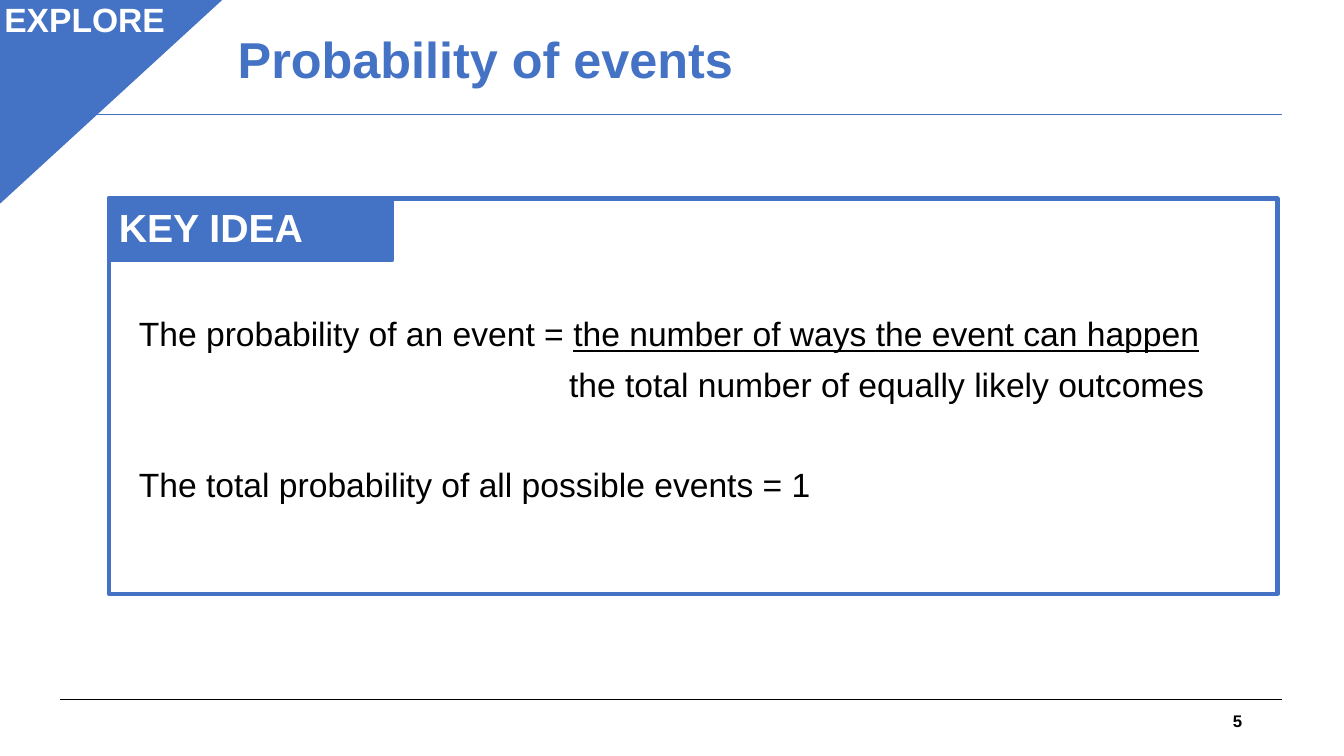
from dataclasses import dataclass

from lxml import etree
from pptx import Presentation, util as u
from pptx.dml.color import RGBColor
from pptx.enum import shapes, text
from pptx.oxml.ns import qn

COLOURS = {"blue": "4472C4", "white": "FFFFFF", "black": "000000"}
WIDTH, HEIGHT = u.Inches(13.33), u.Inches(7.5)
FONT = "Arial"


@dataclass(frozen=True)
class Area:
    """Left, top, width and height as percentages of the slide."""
    left: float
    top: float
    width: float
    height: float

    def lengths(self) -> tuple[int, int, int, int]:
        return (across(self.left), down(self.top),
                across(self.width), down(self.height))


@dataclass(frozen=True)
class Label:
    words: str
    area: Area
    size: float
    colour: str
    align: text.PP_ALIGN = text.PP_ALIGN.LEFT
    anchor: text.MSO_ANCHOR = text.MSO_ANCHOR.MIDDLE
    spacing: float = 1.0


@dataclass(frozen=True)
class Block:
    area: Area
    kind: shapes.MSO_SHAPE
    fill: str | None
    weight: float


@dataclass(frozen=True)
class Rule:
    top: float
    colour: str


@dataclass(frozen=True)
class Statement:
    words: tuple[str, ...]  # the second span is underlined
    before: float = 1.4
    indent: float = 0.0


def across(percent: float) -> int:
    return round(WIDTH * percent / 100)


def down(percent: float) -> int:
    return round(HEIGHT * percent / 100)


def colour_of(name: str) -> RGBColor:
    return RGBColor.from_string(COLOURS[name])


def style(span, size: float, colour: str, bold: bool = False) -> None:
    span.font.name = FONT
    span.font.size = u.Pt(size)
    span.font.bold = bold
    span.font.color.rgb = colour_of(colour)


def write(box, label: Label) -> None:
    frame = box.text_frame
    frame.word_wrap = True
    frame.vertical_anchor = label.anchor
    frame.text = label.words
    para = frame.paragraphs[0]
    para.alignment = label.align
    para.line_spacing = label.spacing
    style(para.runs[0], label.size, label.colour, bold=True)


def add_label(page, label: Label) -> None:
    write(page.shapes.add_textbox(*label.area.lengths()), label)


def add_block(parent, block: Block):
    box = parent.shapes.add_shape(block.kind, *block.area.lengths())
    box.shadow.inherit = False
    if block.fill:
        box.fill.solid()
        box.fill.fore_color.rgb = colour_of(block.fill)
    else:
        box.fill.background()
    box.line.color.rgb = colour_of("blue")
    box.line.width = u.Pt(block.weight)
    return box


def add_rule(page, rule: Rule) -> None:
    line = page.shapes.add_connector(
        shapes.MSO_CONNECTOR.STRAIGHT,
        across(4.43), down(rule.top), across(95.42), down(rule.top))
    line.line.color.rgb = colour_of(rule.colour)
    line.line.width = u.Pt(0.75)
    etree.SubElement(line._element.spPr, qn("a:effectLst"))


def add_statements(page, area: Area, statements: list[Statement]) -> None:
    frame = page.shapes.add_textbox(*area.lengths()).text_frame
    frame.word_wrap = True
    for index, statement in enumerate(statements):
        para = frame.add_paragraph() if index else frame.paragraphs[0]
        para.space_before = u.Pt(statement.before)
        para.space_after = u.Pt(6)
        if statement.indent:
            para._p.get_or_add_pPr().set("marL", str(across(statement.indent)))
        for position, words in enumerate(statement.words):
            span = para.add_run()
            span.text = words
            style(span, 24, "black")
            span.font.underline = position == 1


RULES = [Rule(92.53, "black"), Rule(15.2, "blue")]
TITLE = Label("Probability of events", Area(16.95, 0.8, 75, 14.8),
              36, "blue", spacing=0.9)
PAGE_NUMBER = Label("5", Area(70.67, 92.67, 22.5, 5.33),
                    12, "black", text.PP_ALIGN.RIGHT)
KEY_IDEA = Label("KEY IDEA", Area(8.1, 26.27, 21.08, 8.13),
                 28, "white", anchor=text.MSO_ANCHOR.TOP)
EXPLORE = Label("EXPLORE", Area(-0.6, -0.8, 13.8, 6.67), 24, "white",
                text.PP_ALIGN.CENTER, text.MSO_ANCHOR.TOP)
TAB = Block(KEY_IDEA.area, shapes.MSO_SHAPE.RECTANGLE, "blue", 3)
PANEL = Block(Area(8.1, 26.27, 86.95, 52.27),
              shapes.MSO_SHAPE.RECTANGLE, None, 3)
CORNER = Block(Area(-0.23, -0.8, 17.18, 28),
               shapes.MSO_SHAPE.ISOSCELES_TRIANGLE, "blue", 1)
STATEMENTS = [
    Statement(("The probability of an event = ",
               "the number of ways the event can happen")),
    Statement(("the total number of equally likely outcomes",), indent=32),
    Statement(("The total probability of all possible events = 1",),
              before=36.4),
]


def main() -> None:
    deck = Presentation()
    deck.slide_width, deck.slide_height = WIDTH, HEIGHT
    page = deck.slides.add_slide(deck.slide_layouts[6])

    # Rules, page number and title
    for rule in RULES:
        add_rule(page, rule)
    add_label(page, PAGE_NUMBER)
    add_label(page, TITLE)

    # Key idea panel
    group = page.shapes.add_group_shape()
    write(add_block(group, TAB), KEY_IDEA)
    add_block(group, PANEL)
    add_statements(page, Area(9.6, 40.8, 83.57, 26.27), STATEMENTS)

    # Corner flag
    corner = add_block(page, CORNER)
    corner.adjustments[0] = 0
    corner._element.spPr.find(qn("a:xfrm")).set("flipV", "1")
    add_label(page, EXPLORE)

    deck.save("out.pptx")


if __name__ == "__main__":
    main()
